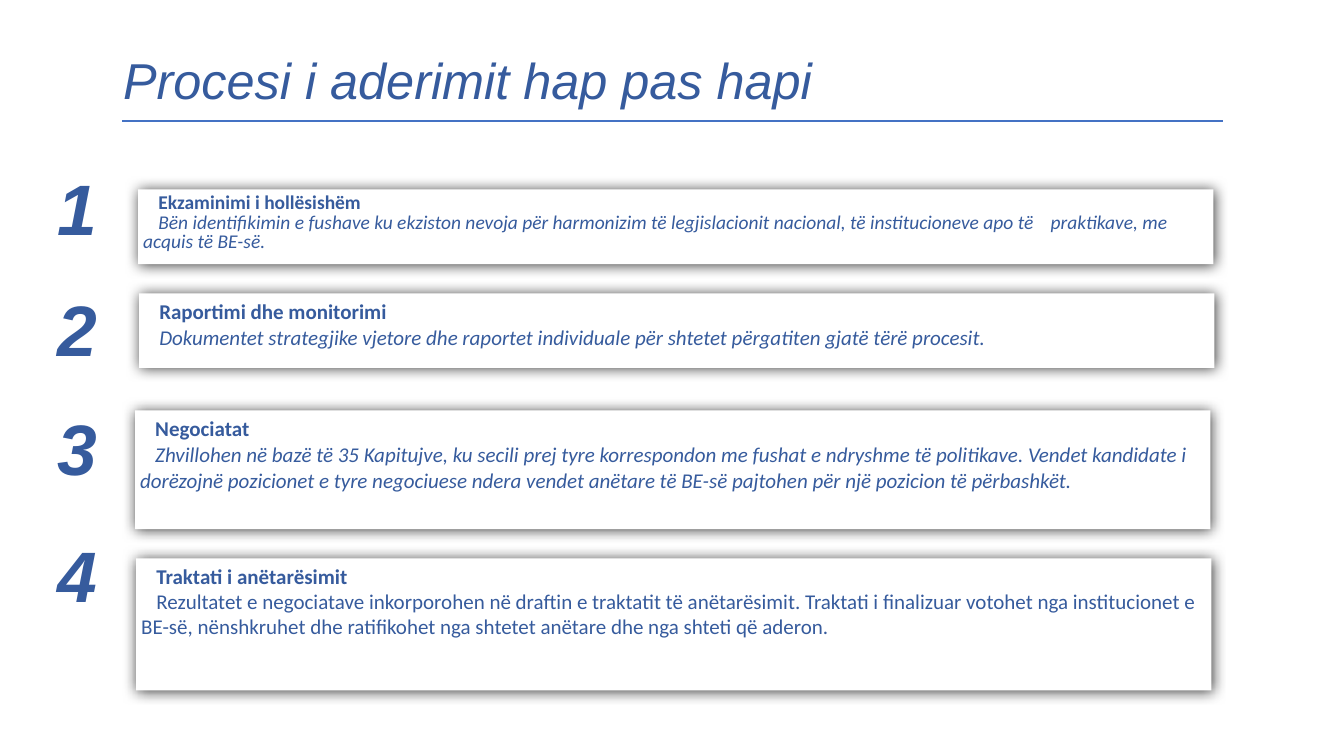
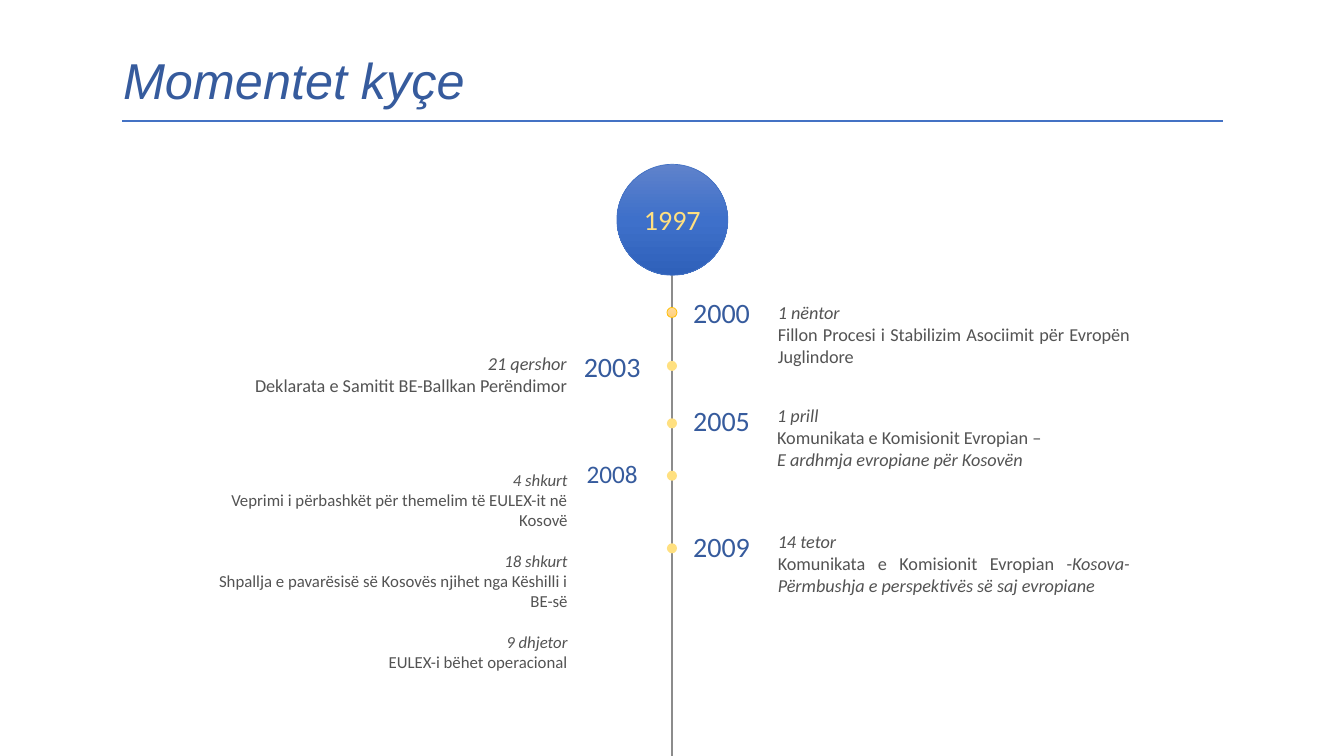
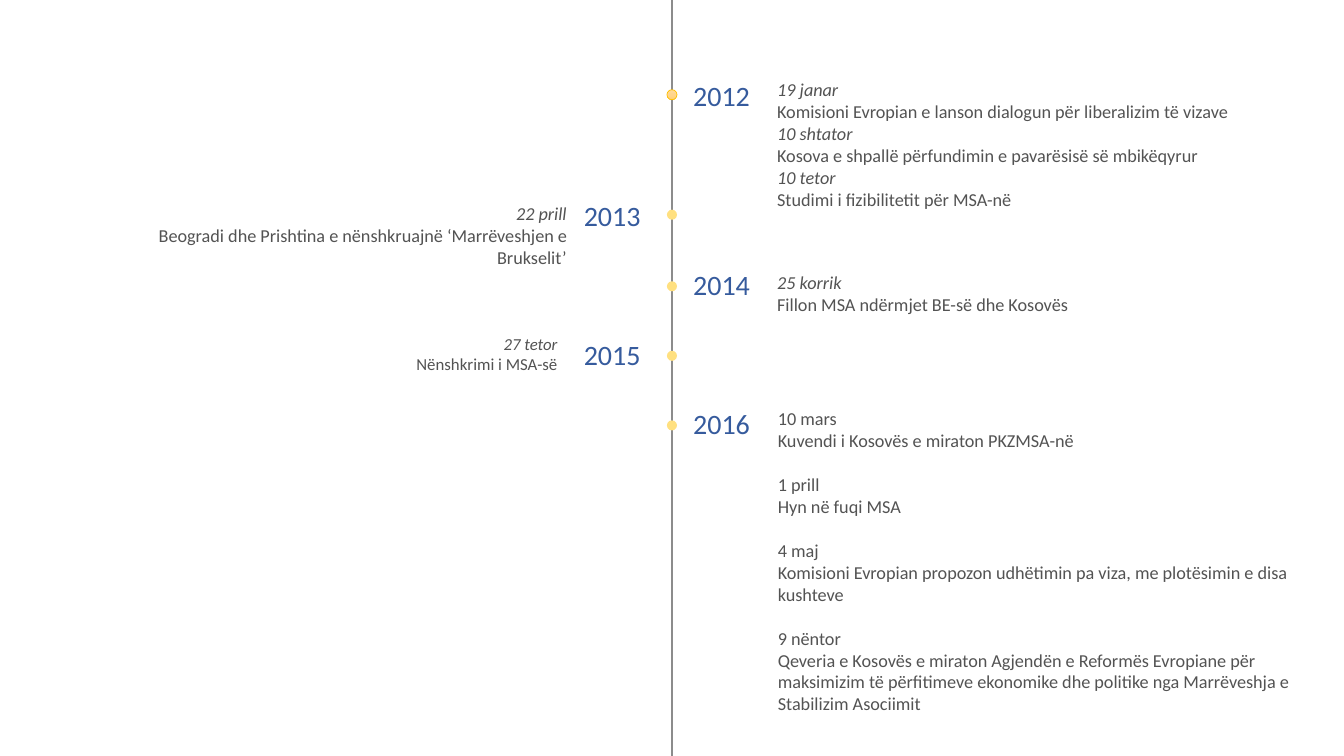
"""Build three slides on the accession process and its timeline."""
from copy import deepcopy

from lxml.etree import SubElement
from pptx import Presentation
from pptx.dml.color import RGBColor
from pptx.enum.shapes import MSO_CONNECTOR, MSO_SHAPE
from pptx.enum.text import MSO_ANCHOR, PP_ALIGN
from pptx.oxml.ns import qn
from pptx.util import Inches, Pt

COLORS = {
    "blue": "365B9D",
    "rule": "4472C4",
    "spine": "8C8C8C",
    "gray": "535353",
    "yellow": "FFE080",
    "amber": "FFC000",
    "white": "FFFFFF",
    "shadow": "000000",
}
GRADIENTS = {
    "globe": ["5F82CB", "3E70CA", "2F61BA"],
    "glow": ["FFDB9B", "FFD58D", "FFD078"],
}
TITLE = {"name": "Arial", "size": Pt(36), "italic": True}
NUMBER = {"name": "Arial", "size": Pt(51), "bold": True, "italic": True}

deck = Presentation()
deck.slide_width, deck.slide_height = Inches(13.33), Inches(7.5)
COLUMN, ROW = deck.slide_width / 100, deck.slide_height / 100
MIDDLE = 50
DOT_WIDTH, DOT_HEIGHT = 0.75, 1.33


def add_box(page, place, kind=None, fill=None, line=None):
    """Add a text box or a preset shape at a place given in columns and rows."""
    units = (COLUMN, ROW, COLUMN, ROW)
    lengths = [round(share * unit) for share, unit in zip(place, units)]
    if kind is None:
        box = page.shapes.add_textbox(*lengths)
    else:
        box = page.shapes.add_shape(kind, *lengths)
        box.shadow.inherit = False
        if fill in GRADIENTS:
            box.fill.gradient()
            box.fill.gradient_angle = 270
            first = box._element.spPr.find(".//" + qn("a:gs"))
            first.addnext(deepcopy(first))
            for index, stop in enumerate(box.fill.gradient_stops):
                stop.position = index / 2
                stop.color.rgb = RGBColor.from_string(GRADIENTS[fill][index])
        else:
            box.fill.solid()
            box.fill.fore_color.rgb = RGBColor.from_string(COLORS[fill])
        if line:
            box.line.color.rgb = RGBColor.from_string(COLORS[line])
            box.line.width = Pt(0.5)
        else:
            box.line.fill.background()
    frame = box.text_frame
    frame.word_wrap = True
    frame.vertical_anchor = MSO_ANCHOR.TOP
    for side in ("left", "top", "right", "bottom"):
        setattr(frame, f"margin_{side}", Inches(0.05))
    return box


def write(box, lines, font, color, layout, gap=0):
    """Write paragraphs; asterisks enclose italics, and a gap parts the pairs."""
    frame = box.text_frame
    for index, line in enumerate(lines):
        para = frame.add_paragraph() if index else frame.paragraphs[0]
        for name, value in layout.items():
            setattr(para, name, value)
        if gap and index and index % 2 == 0:
            para.space_before = Pt(gap)
        for part, words in enumerate(line.split("*")):
            if words:
                span = para.add_run()
                span.text = words
                span.font.italic = part % 2 == 1
                span.font.color.rgb = RGBColor.from_string(COLORS[color])
                for name, value in font.items():
                    setattr(span.font, name, value)


pages = []
for title in ("Procesi i aderimit hap pas hapi", "Momentet kyçe", None):
    page = deck.slides.add_slide(deck.slide_layouts[6])
    pages.append(page)
    strokes = []
    if title:
        box = add_box(page, (8.78, 6.8, 75, 13.6))
        write(box, [title], TITLE, "blue", {"line_spacing": 0.9})
        strokes.append((9.08, 16, 90.97, 16, "rule", 1))
    if page is not pages[0]:
        strokes.append((MIDDLE, 35.87 if title else 0, MIDDLE, 100, "spine", 1.5))
    for left, top, right, bottom, color, width in strokes:
        stroke = page.shapes.add_connector(
            MSO_CONNECTOR.STRAIGHT, round(left * COLUMN), round(top * ROW),
            round(right * COLUMN), round(bottom * ROW))
        stroke.line.color.rgb = RGBColor.from_string(COLORS[color])
        stroke.line.width = Pt(width)
        SubElement(stroke._element.spPr, qn("a:effectLst"))

steps = [
    (22.4, 10.28, 25.07, 9.87, 13.9, 0.8, "Ekzaminimi i hollësishëm",
     "*Bën identifikimin e fushave ku ekziston nevoja për harmonizim të legjislacionit "
     "nacional, të institucioneve apo të\tpraktikave, me acquis të BE-së.*"),
    (38.4, 10.35, 38.8, 9.87, 15, 1.0, "Raportimi dhe monitorimi",
     "*Dokumentet strategjike vjetore dhe raportet individuale për shtetet përgatiten "
     "gjatë tërë procesit.*"),
    (54.13, 10.05, 54.27, 15.73, 15, 1.0, "Negociatat",
     "*Zhvillohen në bazë të 35 Kapitujve, ku secili prej tyre korrespondon me fushat e "
     "ndryshme të politikave. Vendet kandidate i dorëzojnë pozicionet e tyre negociuese "
     "ndera vendet anëtare të BE-së pajtohen për një pozicion të përbashkët.*"),
    (70.93, 10.13, 73.87, 17.47, 15, 1.0, "Traktati i anëtarësimit",
     "Rezultatet e negociatave inkorporohen në draftin e traktatit të anëtarësimit. "
     "Traktati i finalizuar votohet nga institucionet e BE-së, nënshkruhet dhe "
     "ratifikohet nga shtetet anëtare dhe nga shteti që aderon."),
]
for number, step in enumerate(steps, 1):
    number_top, left, top, height, size, spacing, heading, body = step
    box = add_box(pages[0], (3.9, number_top, 4.6, 15.2))
    write(box, [str(number)], NUMBER, "blue", {"line_spacing": 0.9})
    card = add_box(pages[0], (left, top, 80, height), MSO_SHAPE.RECTANGLE, "white")
    write(card, [heading, body], {"name": "Calibri", "size": Pt(size)}, "blue",
          {"line_spacing": spacing, "alignment": PP_ALIGN.LEFT})
    first, second = card.text_frame.paragraphs
    first.runs[0].font.bold = True
    if "*" in body:
        second.space_before = Pt(1)
    for para in (first, second):
        para._p.get_or_add_pPr().set("indent", str(Inches(0.15)))
    effects = card._element.spPr.find(qn("a:effectLst"))
    shadow = SubElement(effects, qn("a:outerShdw"), blurRad=str(Pt(10)), dist="0",
                        dir="2700000", algn="ctr", rotWithShape="0")
    tint = SubElement(shadow, qn("a:srgbClr"), val=COLORS["shadow"])
    SubElement(tint, qn("a:alpha"), val="75000")

globe = add_box(pages[1], (45.9, 21.73, 8.25, 14.67), MSO_SHAPE.OVAL, "globe", "rule")
globe.text_frame.vertical_anchor = MSO_ANCHOR.MIDDLE
write(globe, ["1997"], {"name": "Calibri", "size": Pt(20)}, "yellow",
      {"alignment": PP_ALIGN.CENTER})

LEFT, JUSTIFY, RIGHT = PP_ALIGN.LEFT, PP_ALIGN.JUSTIFY, PP_ALIGN.RIGHT
timelines = [
    [
        ("2000", 20, 41.33, 38.4, (57.5, 39.2, 26.93, 10.13), JUSTIFY, 13, 0, [
            "*1 nëntor*",
            "Fillon Procesi i Stabilizim Asociimit për Evropën Juglindore"]),
        ("2003", 20, 48.4, 45.6, (11.18, 46, 31.35, 7.2), RIGHT, 13, 0, [
            "*21 qershor*",
            "Deklarata e Samitit BE-Ballkan Perëndimor"]),
        ("2005", 20, 56, 52.67, (57.45, 52.8, 26.93, 10.13), JUSTIFY, 13, 0, [
            "*1 prill*",
            "Komunikata e Komisionit Evropian –",
            "*E ardhmja evropiane për Kosovën*"]),
        ("2008", 18, 62.93, 60, (15.68, 61.47, 26.93, 28.27), RIGHT, 12, 14.6, [
            "*4 shkurt*",
            "Veprimi i përbashkët për themelim të EULEX-it në Kosovë",
            "*18 shkurt*",
            "Shpallja e pavarësisë së Kosovës njihet nga Këshilli i BE-së",
            "*9 dhjetor*",
            "EULEX-i bëhet operacional"]),
        ("2009", 20, 72.53, 69.33, (57.5, 69.47, 26.93, 13.07), JUSTIFY, 13, 0, [
            "*14 tetor*",
            "Komunikata e Komisionit Evropian -*Kosova- Përmbushja e perspektivës "
            "së saj evropiane*"]),
    ],
    [
        ("2012", 20, 12.53, 9.73, (57.45, 9.73, 38.03, 18.8), JUSTIFY, 13, 0, [
            "*19 janar*",
            "Komisioni Evropian e lanson dialogun për liberalizim të vizave",
            "*10 shtator*",
            "Kosova e shpallë përfundimin e pavarësisë së mbikëqyrur",
            "*10 tetor*",
            "Studimi i fizibilitetit për MSA-në"]),
        ("2013", 20, 28.4, 25.6, (11.18, 26.13, 31.35, 10.13), RIGHT, 13, 0, [
            "*22 prill*",
            "Beogradi dhe Prishtina e nënshkruajnë ‘Marrëveshjen e Brukselit’"]),
        ("2014", 20, 37.87, 34.67, (57.45, 35.2, 26.93, 7.2), JUSTIFY, 13, 0, [
            "*25 korrik*",
            "Fillon MSA ndërmjet BE-së dhe Kosovës"]),
        ("2015", 20, 47.07, 44, (14.93, 43.47, 26.93, 6.67), RIGHT, 12, 0, [
            "*27 tetor*",
            "Nënshkrimi i MSA-së"]),
        ("2016", 20, 56.27, 53.07, (57.5, 53.2, 39.15, 42.13), LEFT, 13, 15.9, [
            "10 mars",
            "Kuvendi i Kosovës e miraton PKZMSA-në",
            "1 prill",
            "Hyn në fuqi MSA",
            "4 maj",
            "Komisioni Evropian propozon udhëtimin pa viza, me plotësimin e disa kushteve",
            "9 nëntor",
            "Qeveria e Kosovës e miraton Agjendën e Reformës Evropiane për maksimizim të "
            "përfitimeve ekonomike dhe politike nga Marrëveshja e Stabilizim Asociimit"]),
    ],
]
for page, moments in zip(pages[1:], timelines):
    for index, moment in enumerate(moments):
        year, year_size, dot, year_top, place, alignment, size, gap, lines = moment
        fill, line = ("yellow", None) if index else ("glow", "amber")
        add_box(page, (MIDDLE - DOT_WIDTH / 2, dot - DOT_HEIGHT / 2, DOT_WIDTH, DOT_HEIGHT),
                MSO_SHAPE.OVAL, fill, line)
        on_left = alignment == RIGHT
        box = add_box(page, (42.4 if on_left else 51.2, year_top, 6.3, 6.4))
        write(box, [year], {"name": "Calibri", "size": Pt(year_size)}, "blue",
              {"alignment": PP_ALIGN.CENTER if on_left else LEFT})
        write(add_box(page, place), lines, {"name": "Calibri", "size": Pt(size)}, "gray",
              {"alignment": alignment}, gap)

deck.save("out.pptx")
